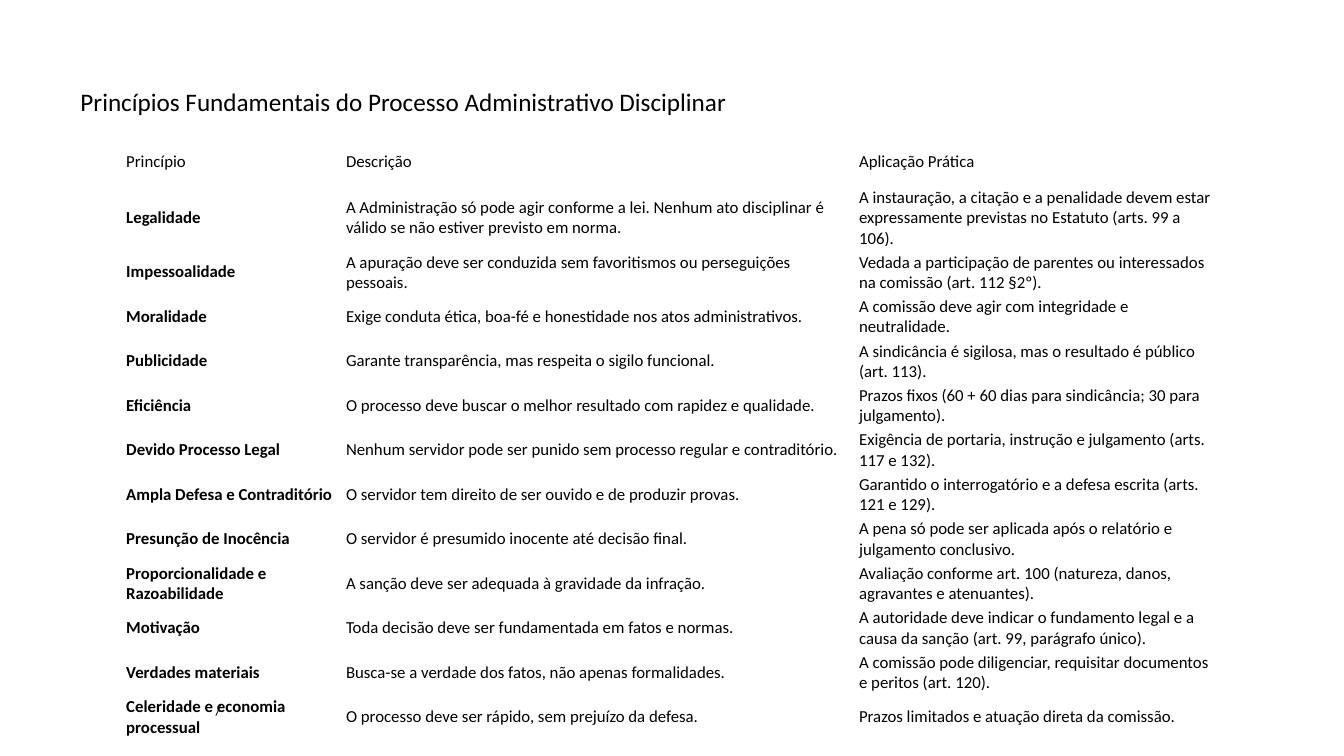
from pptx import Presentation
from pptx import util as u
from pptx.dml import color
from pptx.enum import text


def rgb(value):
    return color.RGBColor.from_string(value)


class Deck:
    font = "Calibri"
    ink = "000000"

    def __init__(self, width, height):
        self.prs = Presentation()
        self.prs.slide_width, self.prs.slide_height = u.Pt(width), u.Pt(height)
        self.s = self.prs.slides.add_slide(self.prs.slide_layouts[6])

    def set_text(self, tf, content, size, bold=False):
        tf.text = content
        tf.word_wrap = True
        for r in tf.paragraphs[0].runs:
            r.font.name, r.font.size, r.font.bold = self.font, u.Pt(size), bold
            r.font.color.rgb = rgb(self.ink)

    def label(self, content, left, top, width, height, size):
        sp = self.s.shapes.add_textbox(*map(u.Pt, (left, top, width, height)))
        self.set_text(sp.text_frame, content, size)
        sp.text_frame.auto_size = text.MSO_AUTO_SIZE.SHAPE_TO_FIT_TEXT

    def table(self, rows, left, top, widths, heights, height, size):
        box = map(u.Pt, (left, top, sum(widths), height))
        frame = self.s.shapes.add_table(len(rows), len(widths), *box)
        table = frame.table
        table.first_row = table.horz_banding = False
        for column, width in zip(table.columns, widths):
            column.width = u.Pt(width)
        for row, row_height in zip(table.rows, heights):
            row.height = u.Pt(row_height)
        for i, values in enumerate(rows):
            for j, value in enumerate(values):
                self.cell(table.cell(i, j), value, size, bold=i > 0 and j == 0)
        frame.height = u.Pt(height)

    def cell(self, cell, content, size, bold):
        cell.fill.background()
        cell.vertical_anchor = text.MSO_ANCHOR.MIDDLE
        cell.margin_left = cell.margin_right = u.Pt(3)
        cell.margin_top = cell.margin_bottom = u.Pt(1.5)
        self.set_text(cell.text_frame, content, size, bold)


PRINCIPLES = [
    ("Princípio", "Descrição", "Aplicação Prática"),
    ("Legalidade",
     "A Administração só pode agir conforme a lei. Nenhum ato disciplinar é válido se não estiver previsto em norma.",
     "A instauração, a citação e a penalidade devem estar expressamente previstas no Estatuto (arts. 99 a 106)."),
    ("Impessoalidade",
     "A apuração deve ser conduzida sem favoritismos ou perseguições pessoais.",
     "Vedada a participação de parentes ou interessados na comissão (art. 112 §2º)."),
    ("Moralidade",
     "Exige conduta ética, boa-fé e honestidade nos atos administrativos.",
     "A comissão deve agir com integridade e neutralidade."),
    ("Publicidade",
     "Garante transparência, mas respeita o sigilo funcional.",
     "A sindicância é sigilosa, mas o resultado é público (art. 113)."),
    ("Eficiência",
     "O processo deve buscar o melhor resultado com rapidez e qualidade.",
     "Prazos fixos (60 + 60 dias para sindicância; 30 para julgamento)."),
    ("Devido Processo Legal",
     "Nenhum servidor pode ser punido sem processo regular e contraditório.",
     "Exigência de portaria, instrução e julgamento (arts. 117 e 132)."),
    ("Ampla Defesa e Contraditório",
     "O servidor tem direito de ser ouvido e de produzir provas.",
     "Garantido o interrogatório e a defesa escrita (arts. 121 e 129)."),
    ("Presunção de Inocência",
     "O servidor é presumido inocente até decisão final.",
     "A pena só pode ser aplicada após o relatório e julgamento conclusivo."),
    ("Proporcionalidade e Razoabilidade",
     "A sanção deve ser adequada à gravidade da infração.",
     "Avaliação conforme art. 100 (natureza, danos, agravantes e atenuantes)."),
    ("Motivação",
     "Toda decisão deve ser fundamentada em fatos e normas.",
     "A autoridade deve indicar o fundamento legal e a causa da sanção (art. 99, parágrafo único)."),
    ("Verdades materiais",
     "Busca-se a verdade dos fatos, não apenas formalidades.",
     "A comissão pode diligenciar, requisitar documentos e peritos (art. 120)."),
    ("Celeridade e economia processual",
     "O processo deve ser rápido, sem prejuízo da defesa.",
     "Prazos limitados e atuação direta da comissão."),
]
SHORT, TALL = 21.6, 30.24
ROW_HEIGHTS = [33, 39.6, TALL, TALL, SHORT, SHORT, TALL, SHORT, SHORT,
               TALL, TALL, TALL, SHORT]


def main():
    deck = Deck(960, 540)
    # Footer mark and title
    deck.label("/", 147, 496.8, 666, 20.9, 11)
    deck.label("Princípios Fundamentais do Processo Administrativo Disciplinar",
               50.4, 58.3, 915.8, 28.8, 18)
    # Table of principles
    deck.table(PRINCIPLES, 87.2, 99.4, (157, 366.5, 262), ROW_HEIGHTS, 430, 12)
    deck.prs.save("out.pptx")


if __name__ == "__main__":
    main()
